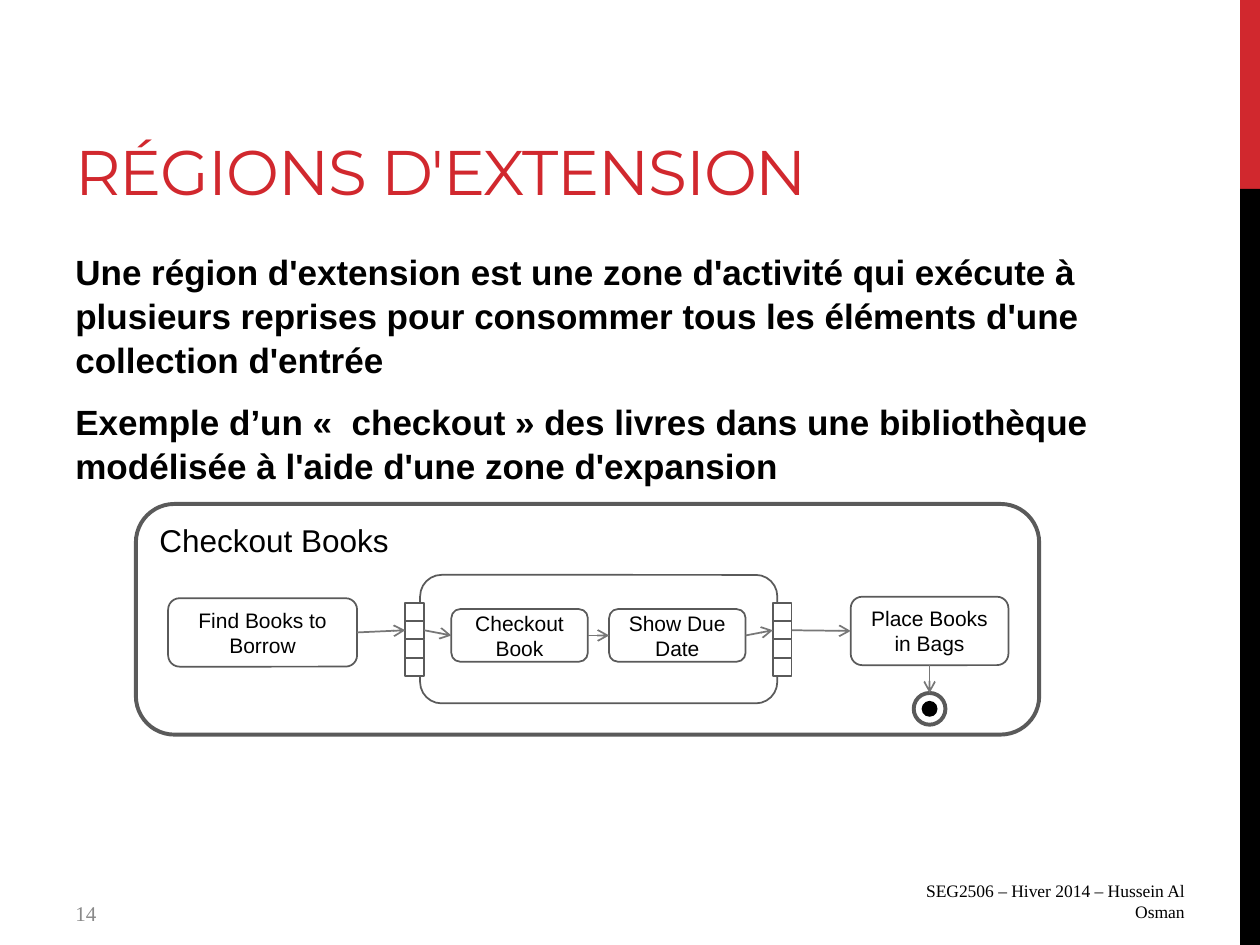
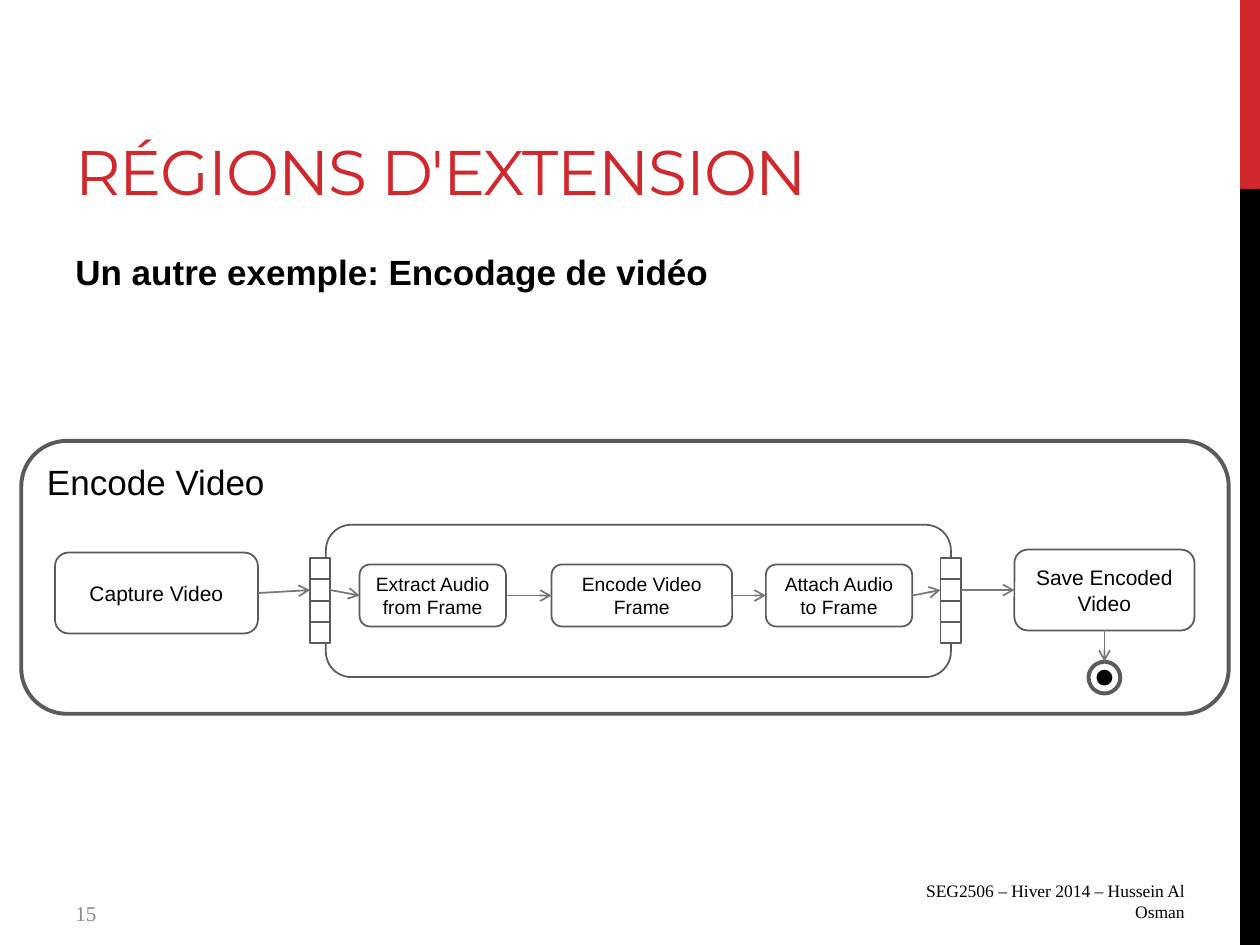
"""Build two slides on UML expansion regions."""
from pptx import Presentation
from pptx.dml.color import RGBColor
from pptx.enum.shapes import MSO_CONNECTOR, MSO_SHAPE
from pptx.enum.text import MSO_ANCHOR, PP_ALIGN
from pptx.oxml.ns import qn
from pptx.util import Cm, Pt
from lxml.etree import SubElement

RED = RGBColor(0xD1, 0x28, 0x2E)
BLACK = RGBColor(0, 0, 0)
WHITE = RGBColor(0xFF, 0xFF, 0xFF)
OUTLINE = RGBColor(0x5A, 0x5A, 0x5A)
ARROW = RGBColor(0x77, 0x77, 0x77)
NUMBER_GREY = RGBColor(0x89, 0x89, 0x89)

TITLE_FONT = "Montserrat"
BODY_FONT = "Arial"
FOOTER_FONT = "Times New Roman"

TITLE = "RÉGIONS D'EXTENSION"
FOOTER = "SEG2506 – Hiver 2014 – Hussein Al Osman"
TOP, LEFT, BOTTOM, RIGHT = range(4)
PIN_COUNT = 4
NODE_SIZE = 0.64
DOT_SIZE = 0.32

CHECKOUT = {
    "name": "Checkout Books", "name_size": 18,
    "frame": (2.74, 10.16, 18.21, 4.65),
    "first": ("Find Books to Borrow", (3.39, 12.06, 3.81, 1.38)),
    "region": (8.47, 11.59, 7.2, 2.59),
    "pin_lefts": (8.17, 15.58), "pin_top": 12.15, "pin_size": (0.38, 0.37),
    "steps": [("Checkout Book", 9.1, 2.75), ("Show Due Date", 12.28, 2.75)],
    "step_top": 12.28, "step_height": 1.06, "step_size": 12,
    "last": ("Place Books in Bags", (17.15, 12.03, 3.18, 1.38)),
    "node_top": 13.97,
}
ENCODING = {
    "name": "Encode Video", "name_size": 20,
    "frame": (0.43, 8.89, 24.34, 5.5),
    "first": ("Capture Video", (1.11, 11.14, 4.09, 1.63)),
    "region": (6.57, 10.58, 12.6, 3.07),
    "pin_lefts": (6.25, 18.96), "pin_top": 11.25, "pin_size": (0.41, 0.43),
    "steps": [("Extract Audio from Frame", 7.25, 2.95),
              ("Encode Video Frame", 11.12, 3.64),
              ("Attach Audio to Frame", 15.44, 2.95)],
    "step_top": 11.38, "step_height": 1.25, "step_size": 11,
    "last": ("Save Encoded Video", (20.45, 11.08, 3.63, 1.63)),
    "node_top": 13.34,
}


def write_text(frame, text, *, size, font=BODY_FONT, color=BLACK, bold=False,
               align=PP_ALIGN.LEFT, anchor=MSO_ANCHOR.TOP, before=0, after=0,
               line_spacing=None, tracking=None):
    """Fill a text frame with one formatted paragraph per line of text."""
    frame.word_wrap = True
    frame.vertical_anchor = anchor
    for index, line in enumerate(text.split("\n")):
        para = frame.add_paragraph() if index else frame.paragraphs[0]
        para.alignment = align
        para.space_before = Pt(before if index else 0)
        para.space_after = Pt(after)
        para.line_spacing = line_spacing
        span = para.add_run()
        span.text = line
        span.font.name = font
        span.font.size = Pt(size)
        span.font.bold = bold
        span.font.color.rgb = color
        if tracking is not None:
            span.font._element.set("spc", str(tracking))


def add_text(page, text, bounds, **style):
    """Add a text box with formatted text."""
    box = page.shapes.add_textbox(*map(Cm, bounds))
    write_text(box.text_frame, text, **style)
    return box


def add_box(page, kind, bounds, fill=None, line=None, width=1):
    """Add a preset shape with an optional fill and outline."""
    box = page.shapes.add_shape(kind, *map(Cm, bounds))
    box.shadow.inherit = False
    if fill is None:
        box.fill.background()
    else:
        box.fill.solid()
        box.fill.fore_color.rgb = fill
    if line is None:
        box.line.fill.background()
    else:
        box.line.color.rgb = line
        box.line.width = Pt(width)
    return box


def add_action(page, text, bounds, size=12):
    """Add a rounded action with a centred label."""
    action = add_box(page, MSO_SHAPE.ROUNDED_RECTANGLE, bounds, line=OUTLINE)
    frame = action.text_frame
    frame.margin_left = frame.margin_right = Cm(0.2)
    write_text(frame, text, size=size, align=PP_ALIGN.CENTER,
               anchor=MSO_ANCHOR.MIDDLE)
    return action


def add_pins(page, left, top, size):
    """Stack the collection pins and return the one that arrows join."""
    width, height = size
    pins = [add_box(page, MSO_SHAPE.RECTANGLE,
                    (left, top + row * height, width, height), WHITE, OUTLINE)
            for row in range(PIN_COUNT)]
    return pins[1]


def add_arrow(page, source, target, start=RIGHT, end=LEFT):
    """Join two shapes with an open-headed arrow."""
    arrow = page.shapes.add_connector(MSO_CONNECTOR.STRAIGHT, 0, 0, 0, 0)
    arrow.begin_connect(source, start)
    arrow.end_connect(target, end)
    arrow.line.color.rgb = ARROW
    arrow.line.width = Pt(1)
    SubElement(arrow.line._get_or_add_ln(), qn("a:tailEnd"), type="arrow")
    SubElement(arrow._element.spPr, qn("a:effectLst"))


def add_final_node(page, center, top):
    """Add the ringed dot that ends an activity and return its ring."""
    ring = add_box(page, MSO_SHAPE.OVAL,
                   (center - NODE_SIZE / 2, top, NODE_SIZE, NODE_SIZE),
                   line=OUTLINE, width=2.25)
    inset = (NODE_SIZE - DOT_SIZE) / 2
    add_box(page, MSO_SHAPE.OVAL,
            (center - DOT_SIZE / 2, top + inset, DOT_SIZE, DOT_SIZE), BLACK)
    return ring


def add_activity(page, activity):
    """Draw an activity whose steps sit in an expansion region."""
    frame = add_box(page, MSO_SHAPE.ROUNDED_RECTANGLE, activity["frame"],
                    line=OUTLINE, width=2.25)
    write_text(frame.text_frame, activity["name"], size=activity["name_size"])
    first = add_action(page, *activity["first"])
    add_box(page, MSO_SHAPE.ROUNDED_RECTANGLE, activity["region"], line=OUTLINE)
    pin_in, pin_out = [
        add_pins(page, left, activity["pin_top"], activity["pin_size"])
        for left in activity["pin_lefts"]]
    steps = [
        add_action(page, text,
                   (left, activity["step_top"], width, activity["step_height"]),
                   activity["step_size"])
        for text, left, width in activity["steps"]]
    last = add_action(page, *activity["last"])
    flow = [first, pin_in, *steps, pin_out, last]
    for source, target in zip(flow, flow[1:]):
        add_arrow(page, source, target)
    left, _, width, _ = activity["last"][1]
    node = add_final_node(page, left + width / 2, activity["node_top"])
    add_arrow(page, last, node, BOTTOM, TOP)


def add_page(deck, number, body, body_height):
    """Add a slide with its bands, title, body text and footers."""
    page = deck.slides.add_slide(deck.slide_layouts[6])
    for top, height, color in ((0, 3.81, RED), (3.81, 15.24, BLACK)):
        add_box(page, MSO_SHAPE.RECTANGLE, (25, top, 0.4, height), color)
    title = add_text(page, TITLE, (1.27, 0.43, 19.25, 3.81), size=36,
                     font=TITLE_FONT, color=RED, anchor=MSO_ANCHOR.BOTTOM,
                     tracking=-60)
    title.text_frame.margin_bottom = Cm(0.05)
    add_text(page, body, (1.27, 4.88, 21.16, body_height), size=20, bold=True,
             before=4, after=6, line_spacing=1.05)
    add_text(page, str(number), (1.27, 18.03, 9.53, 0.79), size=12,
             font=FOOTER_FONT, color=NUMBER_GREY)
    add_text(page, FOOTER, (18.21, 17.65, 5.92, 1.02), size=10,
             font=FOOTER_FONT, align=PP_ALIGN.RIGHT, anchor=MSO_ANCHOR.MIDDLE)
    return page


def main():
    """Build and save the deck."""
    deck = Presentation()
    deck.slide_width, deck.slide_height = Cm(25.4), Cm(19.05)
    page = add_page(
        deck, 14,
        "Une région d'extension est une zone d'activité qui exécute à "
        "plusieurs reprises pour consommer tous les éléments d'une "
        "collection d'entrée\n"
        "Exemple d’un «  checkout » des livres dans une bibliothèque "
        "modélisée à l'aide d'une zone d'expansion", 3.38)
    add_activity(page, CHECKOUT)
    page = add_page(deck, 15, "Un autre exemple: Encodage de vidéo", 2.11)
    add_activity(page, ENCODING)
    deck.save("out.pptx")


if __name__ == "__main__":
    main()
